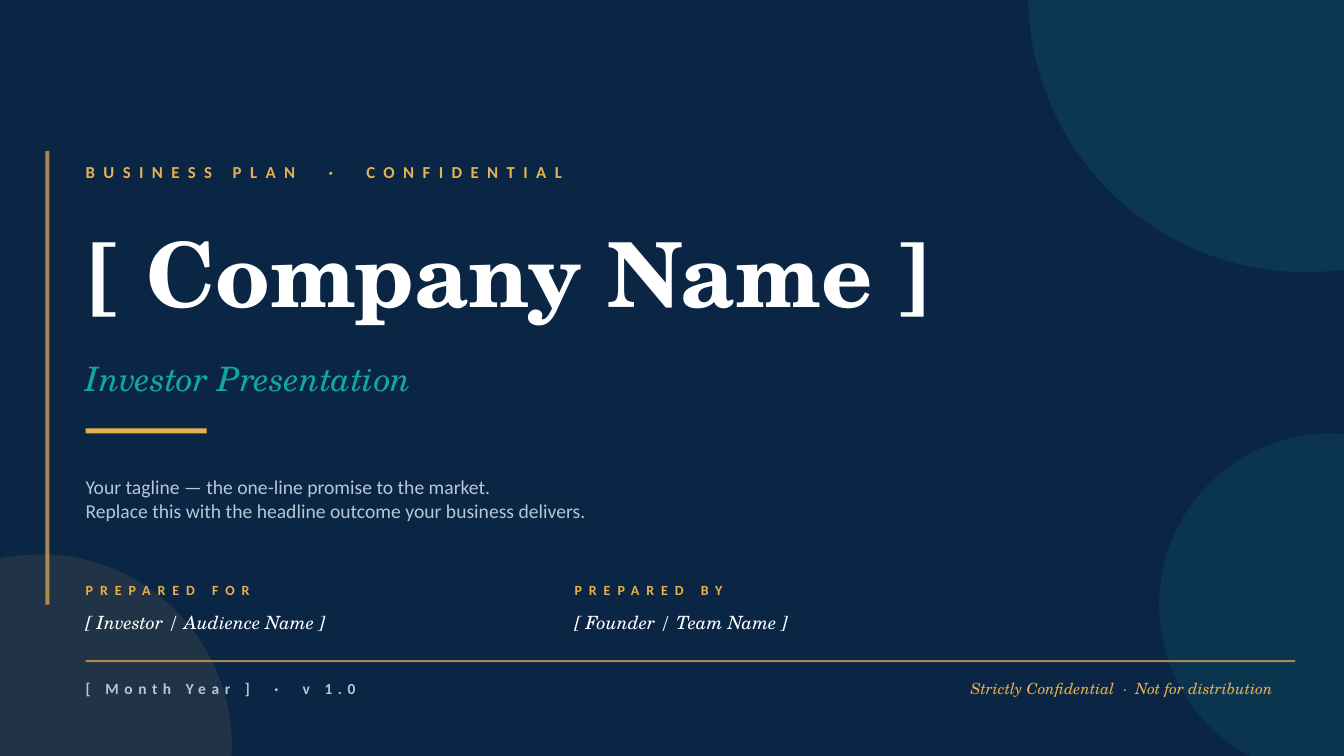
from pptx import Presentation
from pptx.dml.color import RGBColor
from pptx.enum.shapes import MSO_SHAPE
from pptx.enum.text import MSO_ANCHOR, PP_ALIGN
from pptx.oxml.ns import qn
from pptx.util import Pt
from lxml import etree

NAVY = RGBColor(0x0B, 0x25, 0x45)
TEAL = RGBColor(0x0E, 0x7C, 0x7B)
MINT = RGBColor(0x13, 0xA8, 0x9E)
GOLD = RGBColor(0xE8, 0xB1, 0x4F)
MIST = RGBColor(0xB8, 0xC6, 0xD8)
WHITE = RGBColor(0xFF, 0xFF, 0xFF)
SANS, SERIF = "Calibri", "TeX Gyre Schola"
OVAL, RECT = MSO_SHAPE.OVAL, MSO_SHAPE.RECTANGLE
MIDDLE = MSO_ANCHOR.MIDDLE
LEFT, RIGHT = PP_ALIGN.LEFT, PP_ALIGN.RIGHT
DOT = " · "


def add_form(slide, kind, box, color, alpha=100):
    """Add a plain filled shape with an opacity in percent."""
    form = slide.shapes.add_shape(kind, *map(Pt, box))
    form.shadow.inherit = False
    form.fill.solid()
    form.fill.fore_color.rgb = color
    form.line.fill.background()
    if alpha < 100:
        tint = form.element.spPr.find(qn("a:solidFill"))[0]
        etree.SubElement(tint, qn("a:alpha")).set("val", str(alpha * 1000))


def add_text(slide, box, lines, font, size, color, bold=False, italic=False,
             gap=0, align=LEFT):
    """Add lines of text, letter-spaced by gap, with wide spaces around a dot."""
    frame = slide.shapes.add_textbox(*map(Pt, box)).text_frame
    frame.word_wrap = True
    frame.vertical_anchor = MIDDLE
    frame.margin_left = frame.margin_right = 0
    frame.margin_top = frame.margin_bottom = 0
    frame.text = "\n".join(lines)
    for para in frame.paragraphs:
        para.alignment = align
        if DOT in para.text:
            head, tail = para.text.split(DOT)
            para.text = head
            for part in (" ", "·", " ", tail):
                para.add_run().text = part
        for run in para.runs:
            run.font.name, run.font.size = font, Pt(size)
            run.font.bold, run.font.italic = bold, italic
            run.font.color.rgb = color
            wide = 2 * gap + size / 4 if run.text == " " else gap
            if wide:
                run.font._element.set("spc", str(round(wide * 100)))


def add_backdrop(slide, w, h):
    """Paint the background, the three discs and the side bar."""
    slide.background.fill.solid()
    slide.background.fill.fore_color.rgb = NAVY
    discs = (
        (w - 225.6, -201.6, 396, TEAL, 22),
        (w - 132, h - 230.4, 244.8, MINT, 12),
        (-108, h - 144, 273.6, GOLD, 10),
    )
    for x, y, size, color, alpha in discs:
        add_form(slide, OVAL, (x, y, size, size), color, alpha)
    add_form(slide, RECT, (32.4, 108, 2.88, h - 216), GOLD, 70)


def add_title(slide, x, y, w):
    """Stack the eyebrow, name, subtitle, accent and tagline."""
    add_text(slide, (x, y, 720, 28.8), ["BUSINESS PLAN · CONFIDENTIAL"],
             SANS, 12, GOLD, bold=True, gap=6)
    add_text(slide, (x, y + 32.4, w, 108), ["[ Company Name ]"],
             SERIF, 64, WHITE, bold=True)
    add_text(slide, (x, y + 140.4, w, 43.2), ["Investor Presentation"],
             SERIF, 24, MINT, italic=True)
    add_form(slide, RECT, (x, y + 198, 86.4, 3.6), GOLD)
    tagline = ["Your tagline — the one-line promise to the market.",
               "Replace this with the headline outcome your business delivers."]
    add_text(slide, (x, y + 212.4, 612, 72), tagline, SANS, 14, MIST)


def add_credit(slide, x, y, w, label, name):
    """Place a small label above a name."""
    add_text(slide, (x, y, w, 21.6), [label], SANS, 10, GOLD, bold=True, gap=5)
    add_text(slide, (x, y + 21.6, w, 25.2), [name], SERIF, 13, WHITE,
             italic=True)


def add_footer(slide, x, y, w):
    """Draw the rule with the date at left and the notice at right."""
    add_form(slide, RECT, (x, y, w, 1.44), GOLD, 70)
    add_text(slide, (x, y + 7.2, 576, 25.2), ["[ Month Year ] · v 1.0"],
             SANS, 11, MIST, bold=True, gap=4)
    add_text(slide, (x + w - 376, y + 7.2, 360, 25.2),
             ["Strictly Confidential · Not for distribution"],
             SERIF, 11, GOLD, italic=True, align=RIGHT)


def main():
    """Build the cover slide and save it."""
    deck = Presentation()
    wide, high = 960, 540
    deck.slide_width, deck.slide_height = Pt(wide), Pt(high)
    slide = deck.slides.add_slide(deck.slide_layouts[6])
    left, span = 61.2, 864
    add_backdrop(slide, wide, high)
    add_title(slide, left, 108, span)
    credits = (("PREPARED FOR", "[ Investor / Audience Name ]"),
               ("PREPARED BY", "[ Founder / Team Name ]"))
    for col, (label, name) in enumerate(credits):
        add_credit(slide, left + col * 349.2, 410.4, 324, label, name)
    add_footer(slide, left, 471.6, span)
    deck.save("out.pptx")


if __name__ == "__main__":
    main()
